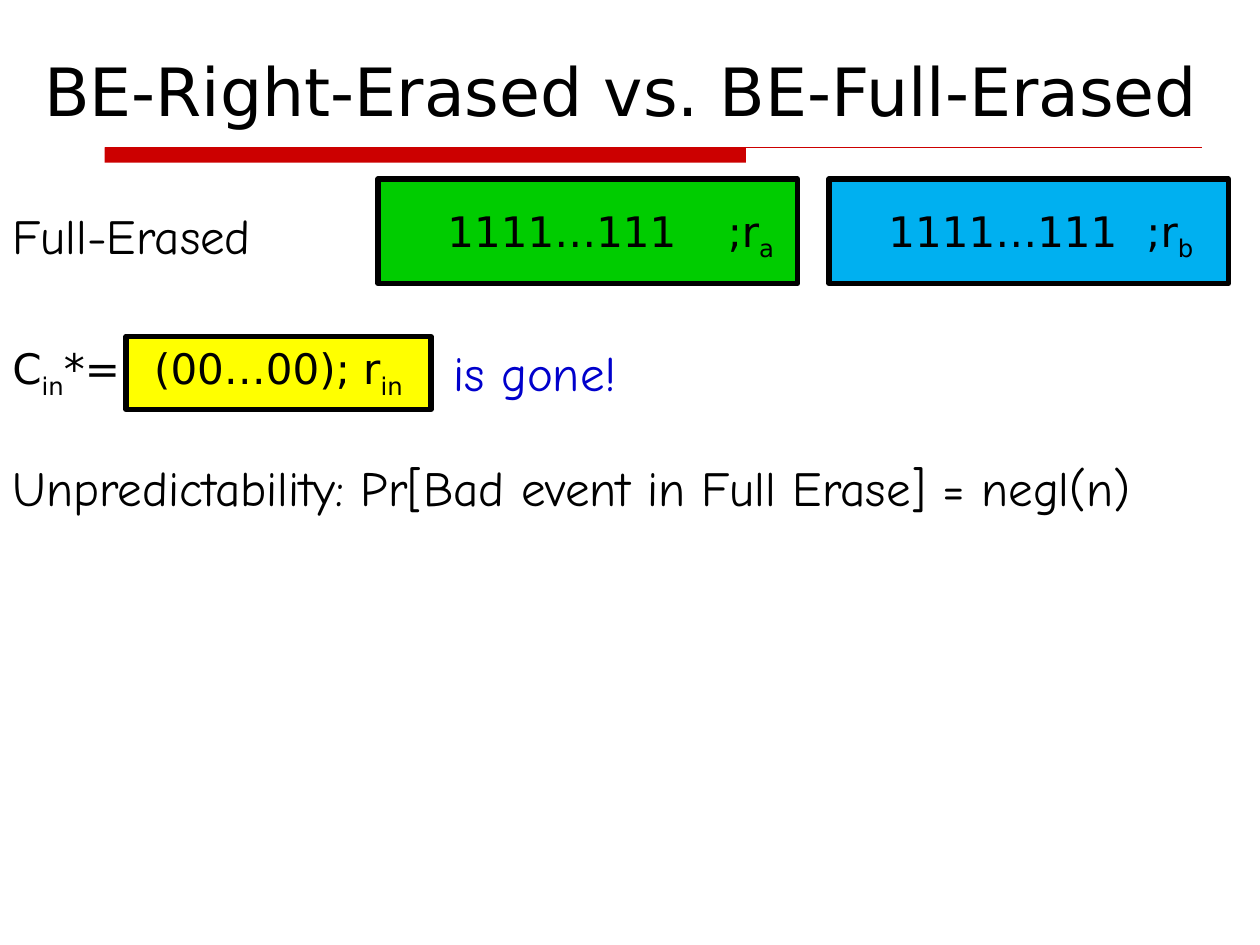
from dataclasses import dataclass

from lxml.etree import SubElement
from pptx import Presentation
from pptx.dml.color import RGBColor
from pptx.enum.shapes import MSO_CONNECTOR, MSO_SHAPE
from pptx.enum.text import MSO_ANCHOR, MSO_AUTO_SIZE, PP_ALIGN
from pptx.oxml.ns import qn
from pptx.util import Inches, Pt

SANS, COMIC = "DejaVu Sans", "Comic Neue"
BLACK, RED, BLUE = "000000", "CC0000", "0000CC"


@dataclass
class Box:
    left: float
    top: float
    width: float
    height: float

    def lengths(self):
        return [Inches(v) for v in (self.left, self.top, self.width, self.height)]


def rgb(color: str) -> RGBColor:
    return RGBColor.from_string(color)


def write(frame, text: str, *, size=24, font=SANS, color=BLACK,
          align=PP_ALIGN.LEFT, hanging=False):
    """Fill the frame; every second part between underscores is a subscript."""
    frame.word_wrap = True
    paragraph = frame.paragraphs[0]
    paragraph.alignment = align
    for i, part in enumerate(text.split("_")):
        if not part:
            continue
        run = paragraph.add_run()
        run.text = part
        run.font.size, run.font.name = Pt(size), font
        run.font.color.rgb = rgb(color)
        if i % 2:
            run.font._element.set("baseline", "-25000")
    if hanging:
        properties = paragraph._p.get_or_add_pPr()
        properties.set("marL", str(Inches(0.56)))
        properties.set("indent", str(Inches(-0.56)))
        spacing = SubElement(properties, qn("a:spcBef"))
        SubElement(spacing, qn("a:spcPct")).set("val", "50000")


def add_label(slide, box: Box, text: str, **style):
    frame = slide.shapes.add_textbox(*box.lengths()).text_frame
    write(frame, text, **style)
    frame.auto_size = MSO_AUTO_SIZE.SHAPE_TO_FIT_TEXT


def add_statement(slide, box: Box, text: str, color=BLACK):
    add_label(slide, box, text, size=28, font=COMIC, color=color, hanging=True)


def add_block(slide, box: Box, fill: str, line=BLACK):
    block = slide.shapes.add_shape(MSO_SHAPE.RECTANGLE, *box.lengths())
    block.shadow.inherit = False
    block.fill.solid()
    block.fill.fore_color.rgb = rgb(fill)
    if line:
        block.line.color.rgb = rgb(line)
        block.line.width = Pt(3)
    else:
        block.line.fill.background()


def add_title_rule(slide):
    add_block(slide, Box(0.83, 1.17, 5.09, 0.12), RED, line=None)
    rule = slide.shapes.add_connector(
        MSO_CONNECTOR.STRAIGHT, Inches(0.83), Inches(1.17), Inches(9.54), Inches(1.17))
    rule.line.color.rgb = rgb(RED)
    rule.line.width = Pt(0.75)
    SubElement(rule._element.spPr, qn("a:effectLst"))


def main():
    prs = Presentation()
    prs.slide_width, prs.slide_height = Inches(10), Inches(7.5)
    slide = prs.slides.add_slide(prs.slide_layouts[5])

    # Title and its rule
    add_title_rule(slide)
    title = slide.shapes.title
    title.left, title.top, title.width, title.height = Box(0.25, 0.17, 9.75, 0.91).lengths()
    title.text_frame.vertical_anchor = MSO_ANCHOR.BOTTOM
    title.text_frame.auto_size = MSO_AUTO_SIZE.NONE
    write(title.text_frame, "BE-Right-Erased vs. BE-Full-Erased", size=38)

    # Fully erased blocks with their randomness
    add_statement(slide, Box(0, 1.58, 7.08, 0.57), "Full-Erased")
    center = PP_ALIGN.CENTER
    add_block(slide, Box(3, 1.42, 3.33, 0.83), "00CC00")
    add_label(slide, Box(5.5, 1.58, 0.92, 0.5), ";r_a", align=center)
    add_block(slide, Box(6.58, 1.42, 3.17, 0.83), "00B0F0")
    add_label(slide, Box(9, 1.58, 0.75, 0.5), ";r_b")
    for left in (3.17, 6.67):
        add_label(slide, Box(left, 1.58, 2.58, 0.5), "1111…111", align=center)

    # Input commitment
    add_block(slide, Box(1, 2.67, 2.42, 0.58), "FFFF00")
    add_label(slide, Box(0.92, 2.67, 2.58, 0.5), "(00…00); r_in", align=center)
    add_label(slide, Box(0, 2.67, 1.17, 0.5), "C_in_*=")
    add_statement(slide, Box(3.5, 2.67, 1.58, 0.57), "is gone!", BLUE)

    # Conclusion
    add_statement(slide, Box(0, 3.58, 10, 0.57),
                  "Unpredictability: Pr[Bad event in Full Erase] = negl(n)")

    prs.save("out.pptx")


if __name__ == "__main__":
    main()
